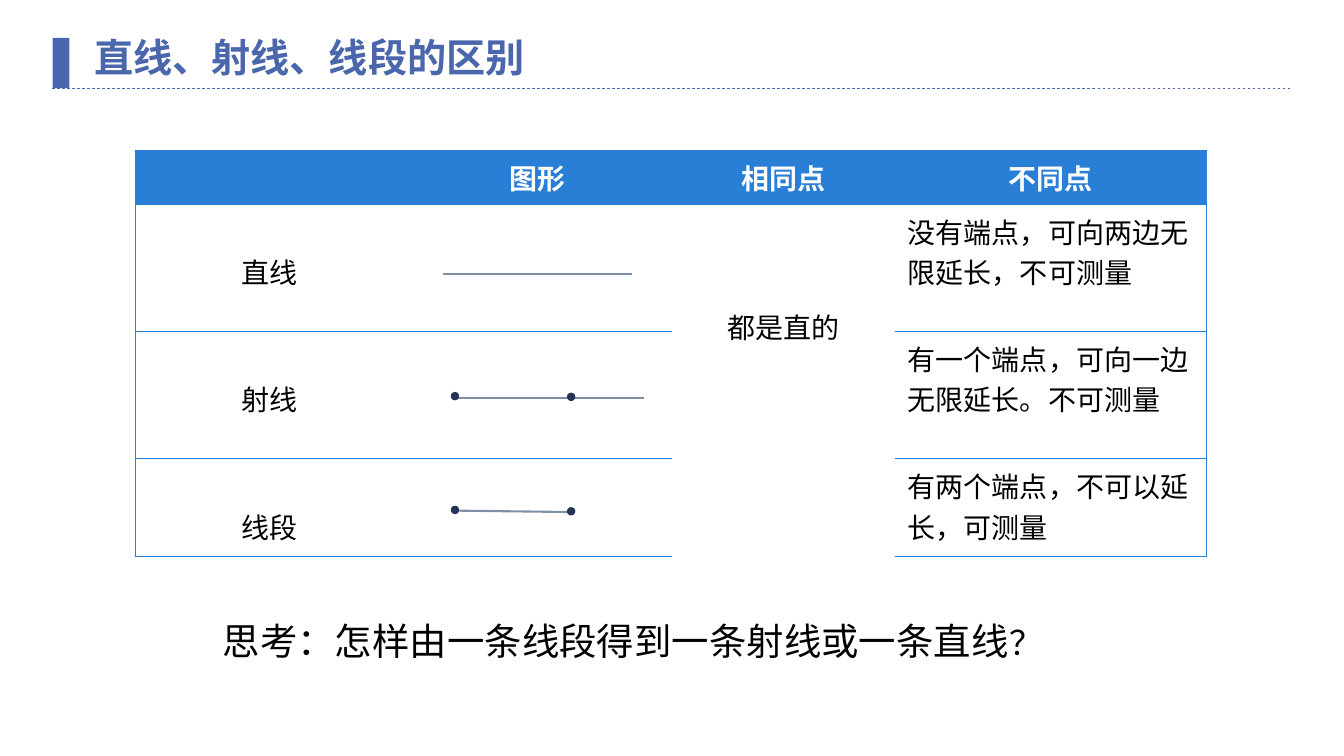
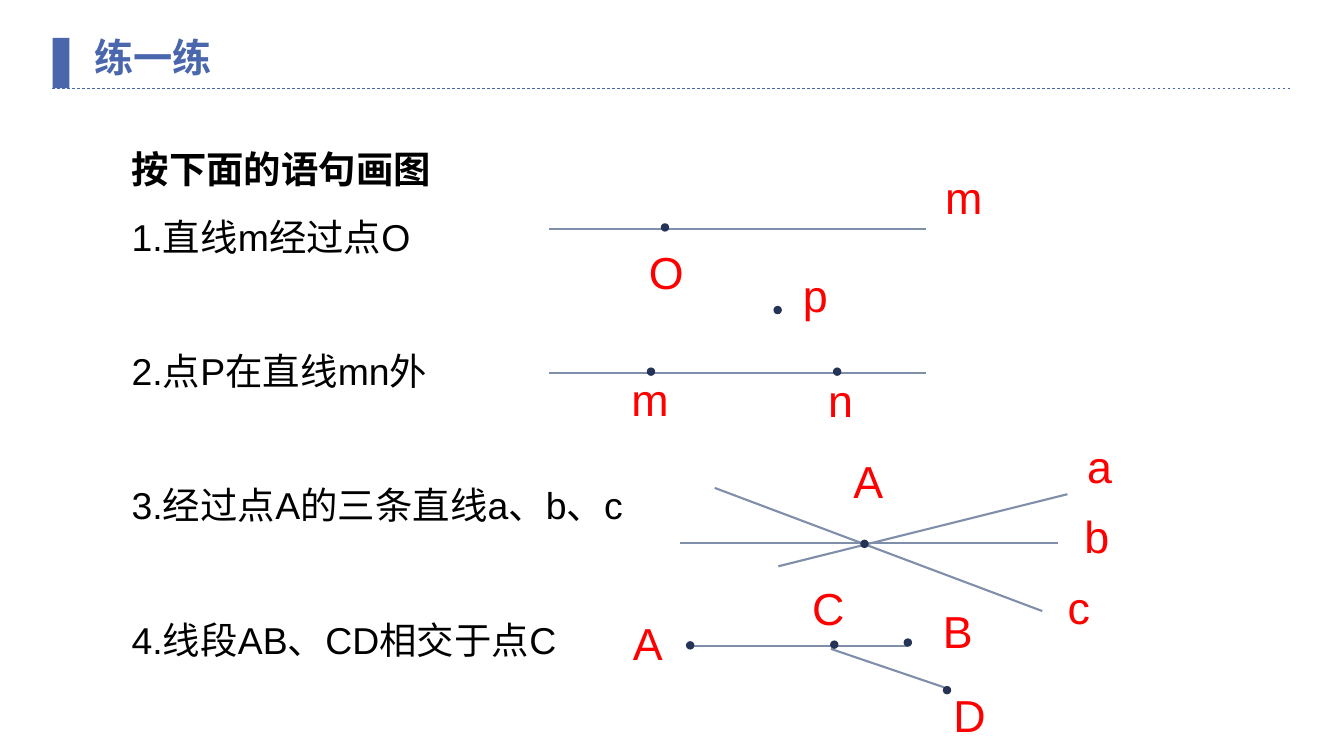
from lxml import etree
from pptx import Presentation
from pptx.dml.color import RGBColor
from pptx.enum.dml import MSO_LINE_DASH_STYLE as Dash
from pptx.enum.shapes import MSO_CONNECTOR as Connector, MSO_SHAPE as Shape
from pptx.enum.text import MSO_ANCHOR as Anchor, MSO_AUTO_SIZE as AutoSize, PP_ALIGN as Align
from pptx.oxml.ns import qn
from pptx.util import Pt

COLORS = {
    "accent": "4A66AC",
    "table": "297FD5",
    "line": "7F8FA9",
    "dot": "253356",
    "label": "FF0000",
    "text": "000000",
    "white": "FFFFFF",
}
FONT = "Arial"
BODY_SIZE = 26.7
DOT = 5
LABEL_BOX = (36, 46)
TITLE_BOX = (60, 20, 616, 41)

TABLE_BOX = (97, 107.25, 765, 293)
COLUMNS = [191.5, 191.5, 159, 223]
ROWS = [38.5, 90.75, 90.75, 70]
SHARED_COLUMN = 2
HEADERS = ["", "图形", "相同点", "不同点"]
KINDS = [
    ("直线", "没有端点，可向两边无限延长，不可测量"),
    ("射线", "有一个端点，可向一边无限延长。不可测量"),
    ("线段", "有两个端点，不可以延长，可测量"),
]
# Figure parts are measured from the corner of the table cell.
KIND_FIGURES = [
    {"lines": [(28, 50, 163, 50)]},
    {"lines": [(37, 47.5, 171.5, 47.5)], "dots": [(36.5, 46.5), (119.5, 47)]},
    {"lines": [(37, 37.5, 117.5, 38.5)], "dots": [(36.5, 37), (119.5, 38)]},
]

EXERCISES = [
    "1.直线m经过点O",
    "2.点P在直线mn外",
    "3.经过点A的三条直线a、b、c",
    "4.线段AB、CD相交于点C",
]
# Each answer: its corner on the slide, then its parts measured from there.
ANSWERS = [
    ((390, 118), {
        "lines": [(2, 45.5, 271.5, 45.5)],
        "dots": [(85, 44.5)],
        "labels": [("m", 278, 0), ("O", 66.5, 53.5)],
    }),
    ((390, 188), {
        "lines": [(2, 78.5, 271.5, 78.5)],
        "dots": [(165.5, 33.5), (75, 77.5), (208, 77.5)],
        "labels": [("p", 176.5, 0), ("m", 54, 74), ("n", 194.5, 75)],
    }),
    ((486, 310), {
        "lines": [(0, 78, 269.5, 78), (24.5, 38.5, 258.5, 126.5), (70, 94.5, 276.5, 43)],
        "dots": [(131.5, 78.5)],
        "labels": [("A", 116.5, 10.5), ("a", 283.5, 0), ("b", 281.5, 49.5), ("c", 269.5, 100.5)],
    }),
    ((445, 411), {
        "lines": [(50.5, 50.5, 203.5, 50.5), (148.5, 52.5, 229.5, 80)],
        "dots": [(48, 50), (203.5, 48), (151, 49.5), (231.5, 82)],
        "labels": [("A", 0, 25.5), ("B", 221.5, 16.5), ("C", 128, 0), ("D", 229, 76.5)],
    }),
]


def rgb(name):
    return RGBColor.from_string(COLORS[name])


def points(*lengths):
    return [Pt(length) for length in lengths]


def style(paragraph, size, color="text", bold=False, align=Align.LEFT, spacing=None):
    font = paragraph.font
    font.name, font.size, font.bold = FONT, Pt(size), bold
    font.color.rgb = rgb(color)
    paragraph.alignment = align
    if spacing:
        paragraph.line_spacing = spacing


def add_line(slide, ends, color, width):
    line = slide.shapes.add_connector(Connector.STRAIGHT, *points(*ends))
    line.line.color.rgb = rgb(color)
    line.line.width = Pt(width)
    etree.SubElement(line._element.spPr, qn("a:effectLst"))
    return line


def add_solid(slide, kind, box, color):
    solid = slide.shapes.add_shape(kind, *points(*box))
    solid.shadow.inherit = False
    solid.fill.solid()
    solid.fill.fore_color.rgb = rgb(color)
    solid.line.fill.background()
    return solid


def add_text(slide, box):
    frame = slide.shapes.add_textbox(*points(*box)).text_frame
    frame.word_wrap = True
    return frame


def add_titled_slide(deck, title):
    """Add a slide with the shared title, side bar and dashed rule."""
    slide = deck.slides.add_slide(deck.slide_layouts[5])
    rule = add_line(slide, (37.5, 63, 923, 63), "accent", 0.5)
    rule.line.dash_style = Dash.DASH
    add_solid(slide, Shape.RECTANGLE, (37.5, 27, 12, 36), "accent")
    heading = slide.shapes.title
    heading.left, heading.top, heading.width, heading.height = points(*TITLE_BOX)
    frame = heading.text_frame
    frame.text = title
    frame.word_wrap = True
    frame.auto_size = AutoSize.NONE
    frame.vertical_anchor = Anchor.MIDDLE
    style(frame.paragraphs[0], 28, "accent", bold=True)
    return slide


def draw_figure(slide, corner, lines=(), dots=(), labels=()):
    left, top = corner
    for x1, y1, x2, y2 in lines:
        add_line(slide, (left + x1, top + y1, left + x2, top + y2), "line", 1.5)
    for x, y in dots:
        box = (left + x - DOT / 2, top + y - DOT / 2, DOT, DOT)
        dot = add_solid(slide, Shape.OVAL, box, "dot")
        dot.line.color.rgb = rgb("dot")
        dot.line.width = Pt(1)
    for letter, x, y in labels:
        frame = add_text(slide, (left + x, top + y, *LABEL_BOX))
        frame.text = letter
        style(frame.paragraphs[0], 32, "label")


def set_borders(cell, visible):
    """Give the cell a thin line on each visible edge and none on the others."""
    properties = cell._tc.get_or_add_tcPr()
    for index, edge in enumerate(("lnL", "lnR", "lnT", "lnB")):
        border = etree.Element(qn(f"a:{edge}"), w=str(Pt(0.5)))
        if edge in visible:
            fill = etree.SubElement(border, qn("a:solidFill"))
            etree.SubElement(fill, qn("a:srgbClr"), val=COLORS["table"])
        else:
            etree.SubElement(border, qn("a:noFill"))
        properties.insert(index, border)


def visible_edges(row, column):
    last_row, last_column = len(ROWS) - 1, len(COLUMNS) - 1
    ruled = column != SHARED_COLUMN
    shown = {
        "lnL": column == 0,
        "lnR": column == last_column,
        "lnT": ruled or row <= 1,
        "lnB": ruled or row in (0, last_row),
    }
    return [edge for edge, is_shown in shown.items() if is_shown]


def write_cell(cell, text, **look):
    cell.text = text
    style(cell.text_frame.paragraphs[0], 20, **look)


def add_comparison(slide, box):
    """Add the table and draw one figure in each cell of its second column."""
    table = slide.shapes.add_table(len(ROWS), len(COLUMNS), *points(*box)).table
    table.first_row = table.horz_banding = False
    for column, width in zip(table.columns, COLUMNS):
        column.width = Pt(width)
    for row, height in zip(table.rows, ROWS):
        row.height = Pt(height)

    for r in range(len(ROWS)):
        for c in range(len(COLUMNS)):
            cell = table.cell(r, c)
            cell.margin_left = cell.margin_right = Pt(9.5)
            cell.margin_top = cell.margin_bottom = Pt(4.75)
            if r == 0:
                cell.fill.solid()
                cell.fill.fore_color.rgb = rgb("table")
            else:
                cell.fill.background()
            set_borders(cell, visible_edges(r, c))

    for c, header in enumerate(HEADERS):
        write_cell(table.cell(0, c), header, color="white", bold=True, align=Align.CENTER)
    for r, (kind, difference) in enumerate(KINDS, start=1):
        write_cell(table.cell(r, 0), kind, align=Align.CENTER, spacing=2.0)
        write_cell(table.cell(r, 3), difference)
    shared = table.cell(1, SHARED_COLUMN)
    shared.merge(table.cell(len(ROWS) - 1, SHARED_COLUMN))
    shared.margin_top = Pt(73)
    write_cell(shared, "都是直的", align=Align.CENTER)

    left, top = box[:2]
    for r, figure in enumerate(KIND_FIGURES, start=1):
        draw_figure(slide, (left + COLUMNS[0], top + sum(ROWS[:r])), **figure)


def add_question(slide, box):
    paragraph = add_text(slide, box).paragraphs[0]
    style(paragraph, BODY_SIZE)
    paragraph.add_run().text = "思考：怎样由一条线段得到一条射线或一条直线"
    mark = paragraph.add_run()
    mark.text = "？"
    mark.font.size = Pt(24)


def add_exercises(slide, box):
    frame = add_text(slide, box)
    frame.text = "\n".join(["按下面的语句画图", *EXERCISES])
    for index, paragraph in enumerate(frame.paragraphs):
        style(paragraph, BODY_SIZE, bold=index == 0, spacing=1.5)
        if index > 1:
            paragraph.space_before = Pt(48)


def build_comparison_slide(deck):
    slide = add_titled_slide(deck, "直线、射线、线段的区别")
    add_comparison(slide, TABLE_BOX)
    add_question(slide, (152, 438, 616, 40))


def build_practice_slide(deck):
    slide = add_titled_slide(deck, "练一练")
    add_exercises(slide, (87, 85, 780, 387))
    for corner, figure in ANSWERS:
        draw_figure(slide, corner, **figure)


def main():
    deck = Presentation()
    deck.slide_width, deck.slide_height = points(960, 540)
    build_comparison_slide(deck)
    build_practice_slide(deck)
    deck.save("out.pptx")


if __name__ == "__main__":
    main()
